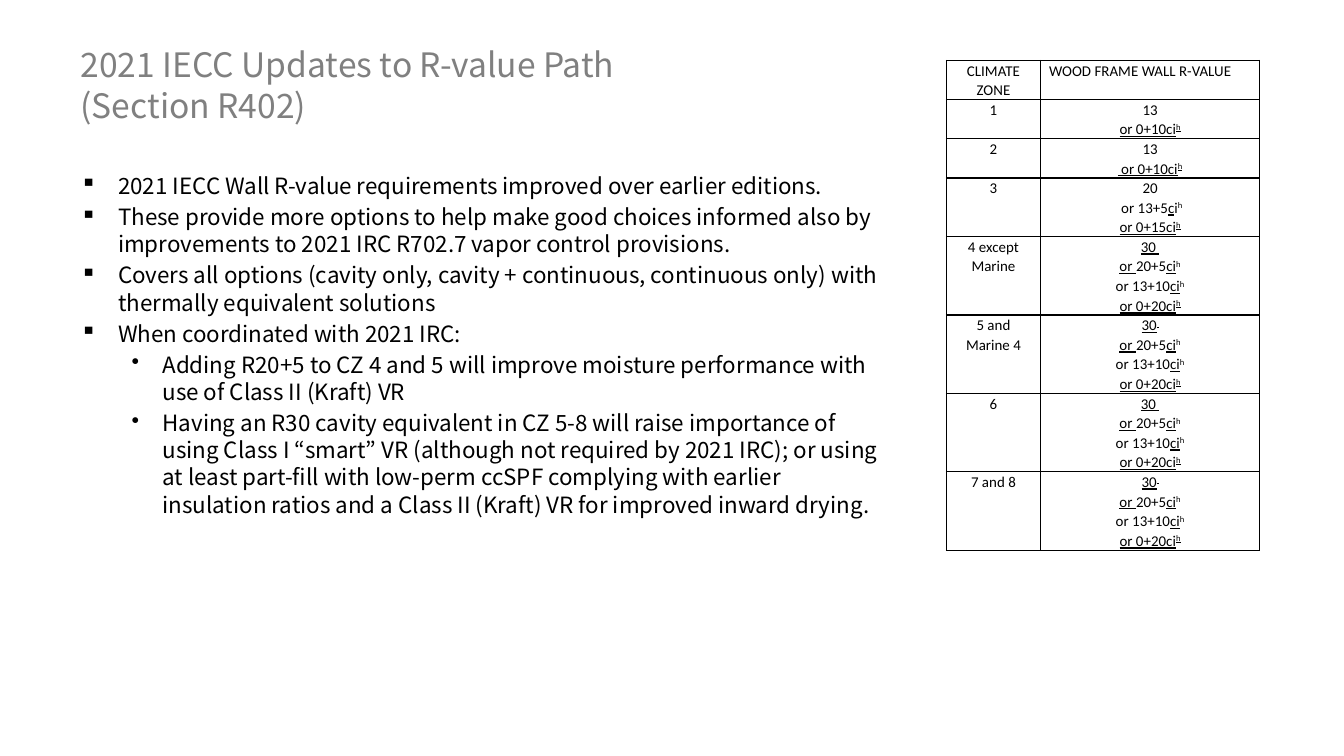
from lxml import etree
from pptx import Presentation
from pptx.dml.color import RGBColor
from pptx.enum.text import MSO_ANCHOR, MSO_AUTO_SIZE, PP_ALIGN
from pptx.oxml.ns import qn
from pptx.util import Pt

LEFT, CENTER = PP_ALIGN.LEFT, PP_ALIGN.CENTER
MIDDLE, TOP = MSO_ANCHOR.MIDDLE, MSO_ANCHOR.TOP
NO_FIT = MSO_AUTO_SIZE.NONE
TITLE_ONLY = 5


def color(value):
    return RGBColor.from_string(value)


class SlideBuilder:
    text_font = "Noto Sans CJK JP"
    table_font = "Calibri"
    ink = "000000"
    title_ink = "808080"
    line_height = 10.5
    bullets = [("▪", 20.2, 20.2), ("•", 44, 16.5)]

    def __init__(self, presentation):
        layout = presentation.slide_layouts[TITLE_ONLY]
        self.slide = presentation.slides.add_slide(layout)

    def format_run(self, run, name, size, ink):
        run.font.name = name
        run.font.size = Pt(size)
        run.font.color.rgb = color(ink)

    def title(self, text, left, top, width, height):
        heading = self.slide.shapes.title
        heading.left, heading.top = Pt(left), Pt(top)
        heading.width, heading.height = Pt(width), Pt(height)
        frame = heading.text_frame
        frame.text = text
        frame.word_wrap = True
        frame.auto_size = NO_FIT
        frame.vertical_anchor = MIDDLE
        paragraph = frame.paragraphs[0]
        paragraph.alignment = LEFT
        paragraph.line_spacing = Pt(22)
        for run in paragraph.runs:
            self.format_run(run, self.text_font, 18, self.title_ink)

    def bullet_list(self, points, left, top, width, height):
        box = self.slide.shapes.add_textbox(Pt(left), Pt(top), Pt(width), Pt(height))
        frame = box.text_frame
        frame.word_wrap = True
        frame.text = "\n".join(text for _, text in points)
        for index, (paragraph, (level, _)) in enumerate(zip(frame.paragraphs, points)):
            mark, margin, hanging = self.bullets[level]
            paragraph.level = level
            properties = paragraph._p.get_or_add_pPr()
            properties.set("marL", str(Pt(margin)))
            properties.set("indent", str(-Pt(hanging)))
            etree.SubElement(properties, qn("a:buChar"), char=mark)
            paragraph.line_spacing = Pt(14.5)
            if index:
                paragraph.space_before = Pt(2.2)
            self.format_run(paragraph.runs[0], self.text_font, 12, self.ink)

    def border(self, cell):
        properties = cell._tc.get_or_add_tcPr()
        for position, side in enumerate(("lnL", "lnR", "lnT", "lnB")):
            line = etree.Element(qn(f"a:{side}"), w=str(Pt(0.75)))
            fill = etree.SubElement(line, qn("a:solidFill"))
            etree.SubElement(fill, qn("a:srgbClr"), val=self.ink)
            properties.insert(position, line)

    def fill_cell(self, cell, lines, alignment):
        cell.margin_left = cell.margin_right = Pt(4.5)
        cell.margin_top = cell.margin_bottom = 0
        cell.vertical_anchor = TOP
        cell.fill.background()
        self.border(cell)
        frame = cell.text_frame
        for index, pieces in enumerate(lines):
            paragraph = frame.add_paragraph() if index else frame.paragraphs[0]
            paragraph.alignment = alignment
            paragraph.line_spacing = 1.07
            for text, style in pieces:
                run = paragraph.add_run()
                run.text = text
                self.format_run(run, self.table_font, 8, self.ink)
                if "u" in style:
                    run.font.underline = True
                if "^" in style:
                    run._r.get_or_add_rPr().set("baseline", "30000")

    def table(self, header, rows, left, top, widths):
        line_counts = [2] + [len(values) for _, values in rows]
        heights = [count * self.line_height for count in line_counts]
        frame = self.slide.shapes.add_table(
            len(heights), len(widths), Pt(left), Pt(top), Pt(sum(widths)), Pt(sum(heights)))
        grid = frame.table
        grid.first_row = grid.horz_banding = False
        for column, width in zip(grid.columns, widths):
            column.width = Pt(width)
        for row, height in zip(grid.rows, heights):
            row.height = Pt(height)
        zone_head, value_head = header
        self.fill_cell(grid.cell(0, 0), [[(zone_head, "")]], CENTER)
        self.fill_cell(grid.cell(0, 1), [[(value_head, "")]], LEFT)
        for index, (zone, values) in enumerate(rows, 1):
            self.fill_cell(grid.cell(index, 0), [[(zone, "")]], CENTER)
            self.fill_cell(grid.cell(index, 1), values, CENTER)


def plain(text):
    return [(text, "")]


def new_option(text):
    return [(text, "u"), ("h", "u^")]


def cold_zone(first_line):
    return [
        first_line,
        [("or ", "u"), ("20+5", ""), ("ci", "u"), ("h", "^")],
        [("or 13+10", ""), ("ci", "u"), ("h", "^")],
        new_option("or 0+20ci"),
    ]


THIRTY = [("30 ", "u")]
THIRTY_RAISED = [("30", "u"), (" ", "u^")]

POINTS = [
    (0, "2021 IECC Wall R-value requirements improved over earlier editions."),
    (0, "These provide more options to help make good choices informed also by "
        "improvements to 2021 IRC R702.7 vapor control provisions."),
    (0, "Covers all options (cavity only, cavity + continuous, continuous only) with "
        "thermally equivalent solutions"),
    (0, "When coordinated with 2021 IRC:"),
    (1, "Adding R20+5 to CZ 4 and 5 will improve moisture performance with "
        "use of Class II (Kraft) VR"),
    (1, "Having an R30 cavity equivalent in CZ 5-8 will raise importance of "
        "using Class I “smart” VR (although not required by 2021 IRC); or using "
        "at least part-fill with low-perm ccSPF complying with earlier insulation "
        "ratios and a Class II (Kraft) VR for improved inward drying."),
]

ZONES = [
    ("1", [plain("13"), new_option("or 0+10ci")]),
    ("2", [plain("13"), new_option(" or 0+10ci")]),
    ("3", [plain("20"),
           [(" or 13+5", ""), ("c", "u"), ("i", ""), ("h", "^")],
           new_option("or 0+15ci")]),
    ("4 except Marine", cold_zone(THIRTY)),
    ("5 and Marine 4", cold_zone(THIRTY_RAISED)),
    ("6", cold_zone(THIRTY)),
    ("7 and 8", cold_zone(THIRTY_RAISED)),
]


def main():
    presentation = Presentation()
    presentation.slide_width, presentation.slide_height = Pt(720), Pt(405)
    builder = SlideBuilder(presentation)
    builder.title("2021 IECC Updates to R-value Path\v(Section R402)", 36, 12.5, 648, 65)
    builder.bullet_list(POINTS, 36, 88.5, 448.5, 234)
    builder.table(("CLIMATE ZONE", "WOOD FRAME WALL R-VALUE"), ZONES, 507, 32.4, (50.5, 117.3))
    presentation.save("out.pptx")


if __name__ == "__main__":
    main()
